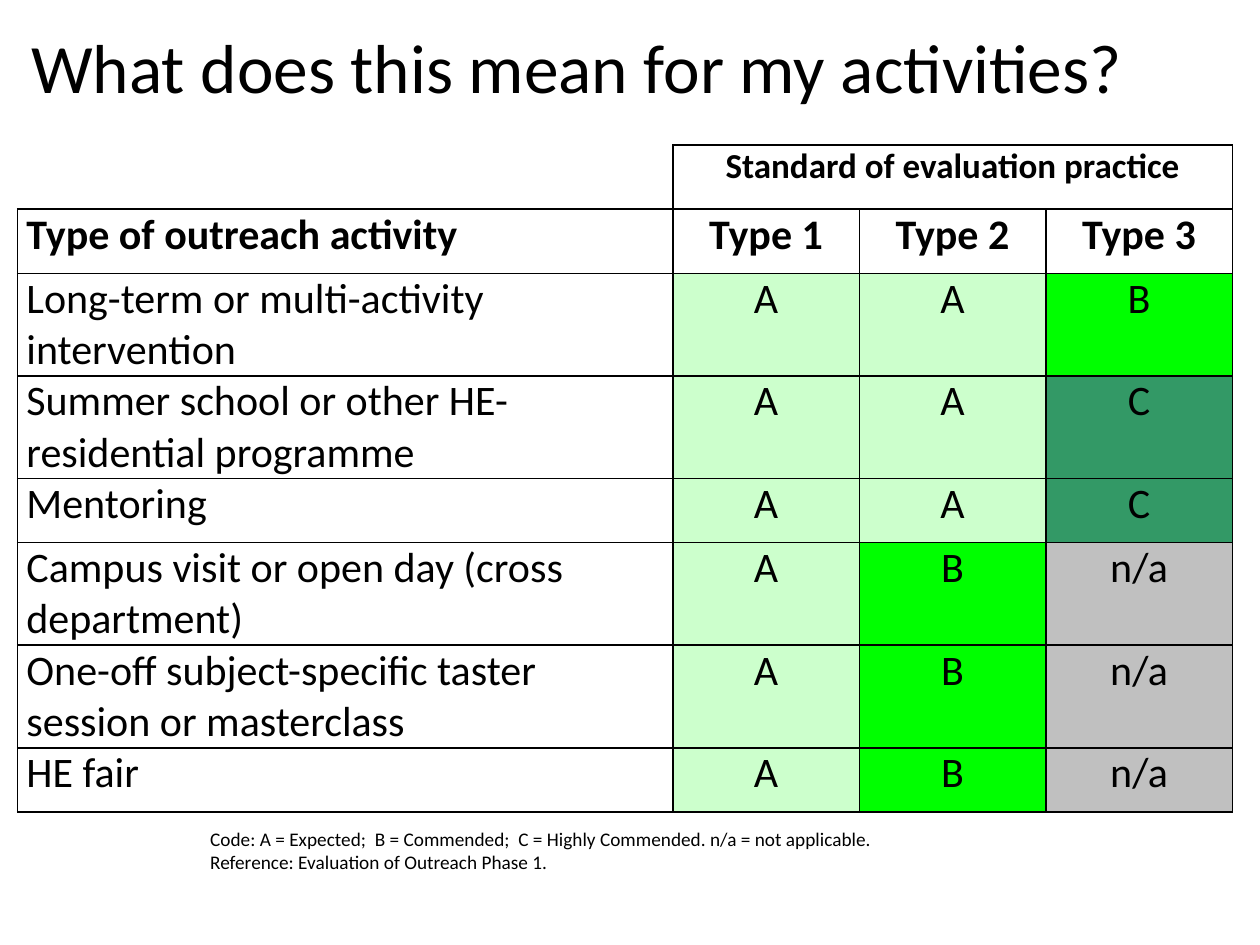
from dataclasses import dataclass
from lxml.etree import SubElement as Sub
from pptx import Presentation
from pptx.dml.color import RGBColor as Rgb
from pptx.enum.text import MSO_ANCHOR as Anchor, PP_ALIGN as Align
from pptx.oxml.ns import qn
from pptx.util import Inches, Pt


@dataclass(frozen=True)
class Theme:
    font: str = "Calibri"
    ink: str = "000000"
    title: float = 39.6
    head: int = 20
    body: int = 24
    note: int = 11
    line: int = 1


theme = Theme()
fills = {"A": "CCFFCC", "B": "00FF00", "C": "339966", "n/a": "C0C0C0"}

title = "What does this mean for my activities? "
span = "Standard of evaluation practice"
heads = ("Type of outreach activity", "Type 1", "Type 2", "Type 3")
rates = [
    ("Long-term or multi-activity intervention", "A", "A", "B"),
    ("Summer school or other HE-residential programme", "A", "A", "C"),
    ("Mentoring", "A", "A", "C"),
    ("Campus visit or open day (cross department)", "A", "B", "n/a"),
    ("One-off subject-specific taster session or masterclass", "A", "B", "n/a"),
    ("HE fair", "A", "B", "n/a"),
]
notes = [
    "Code: A = Expected;  B = Commended;  C = Highly Commended. n/a = not applicable.",
    "Reference: Evaluation of Outreach Phase 1.",
]

wide, high = 10, 7.5
left, top = 0.14, 1.15
cols = (5.2, 1.48, 1.48, 1.48)
row_h = 0.51


def place(shape, *box):
    shape.left, shape.top, shape.width, shape.height = map(Inches, box)


def style(para, size, align=Align.LEFT, bold=False):
    para.alignment = align
    for run in para.runs:
        font = run.font
        font.name, font.size, font.bold = theme.font, Pt(size), bold
        font.color.rgb = Rgb.from_string(theme.ink)


def edge(cell, shown):
    props = cell._tc.get_or_add_tcPr()
    for side in "LRTB":
        line = Sub(props, qn(f"a:ln{side}"), w=str(Pt(theme.line)))
        if side in shown:
            fill = Sub(line, qn("a:solidFill"))
            Sub(fill, qn("a:srgbClr"), val=theme.ink)
        else:
            Sub(line, qn("a:noFill"))


def add_title(slide):
    shape = slide.shapes.title
    place(shape, left, -0.1, 0.9 * wide, 1.25)
    frame = shape.text_frame
    frame.text = title
    frame.vertical_anchor = Anchor.MIDDLE
    style(frame.paragraphs[0], theme.title, Align.CENTER)


def add_grid(slide):
    rows = [("", span, "", ""), heads, *rates]
    box = map(Inches, (left, top, sum(cols), row_h * len(rows)))
    table = slide.shapes.add_table(len(rows), len(cols), *box).table
    table.first_row = table.horz_banding = False
    for col, width in zip(table.columns, cols):
        col.width = Inches(width)
    for r, row in enumerate(rows):
        table.rows[r].height = Inches(row_h)
        for c, text in enumerate(row):
            cell = table.cell(r, c)
            cell.margin_left = cell.margin_right = Inches(0.07)
            cell.margin_top = cell.margin_bottom = 0
            edge(cell, "RB" if r == c == 0 else "LRTB")
            if text in fills:
                cell.fill.solid()
                cell.fill.fore_color.rgb = Rgb.from_string(fills[text])
            else:
                cell.fill.background()
            cell.text_frame.text = text
            size = theme.body if r else theme.head
            align = Align.CENTER if c else Align.LEFT
            style(cell.text_frame.paragraphs[0], size, align, r < 2)
    table.cell(0, 1).merge(table.cell(0, 3))


def add_notes(slide):
    x = 1.57
    box = map(Inches, (x, 6.5, wide - x, high / 15))
    frame = slide.shapes.add_textbox(*box).text_frame
    frame.word_wrap = True
    frame.vertical_anchor = Anchor.MIDDLE
    frame.text = "\n".join(notes)
    for para in frame.paragraphs:
        style(para, theme.note)


def main():
    deck = Presentation()
    deck.slide_width, deck.slide_height = Inches(wide), Inches(high)
    slide = deck.slides.add_slide(deck.slide_layouts[5])
    add_title(slide)
    add_grid(slide)
    add_notes(slide)
    deck.save("out.pptx")


if __name__ == "__main__":
    main()
